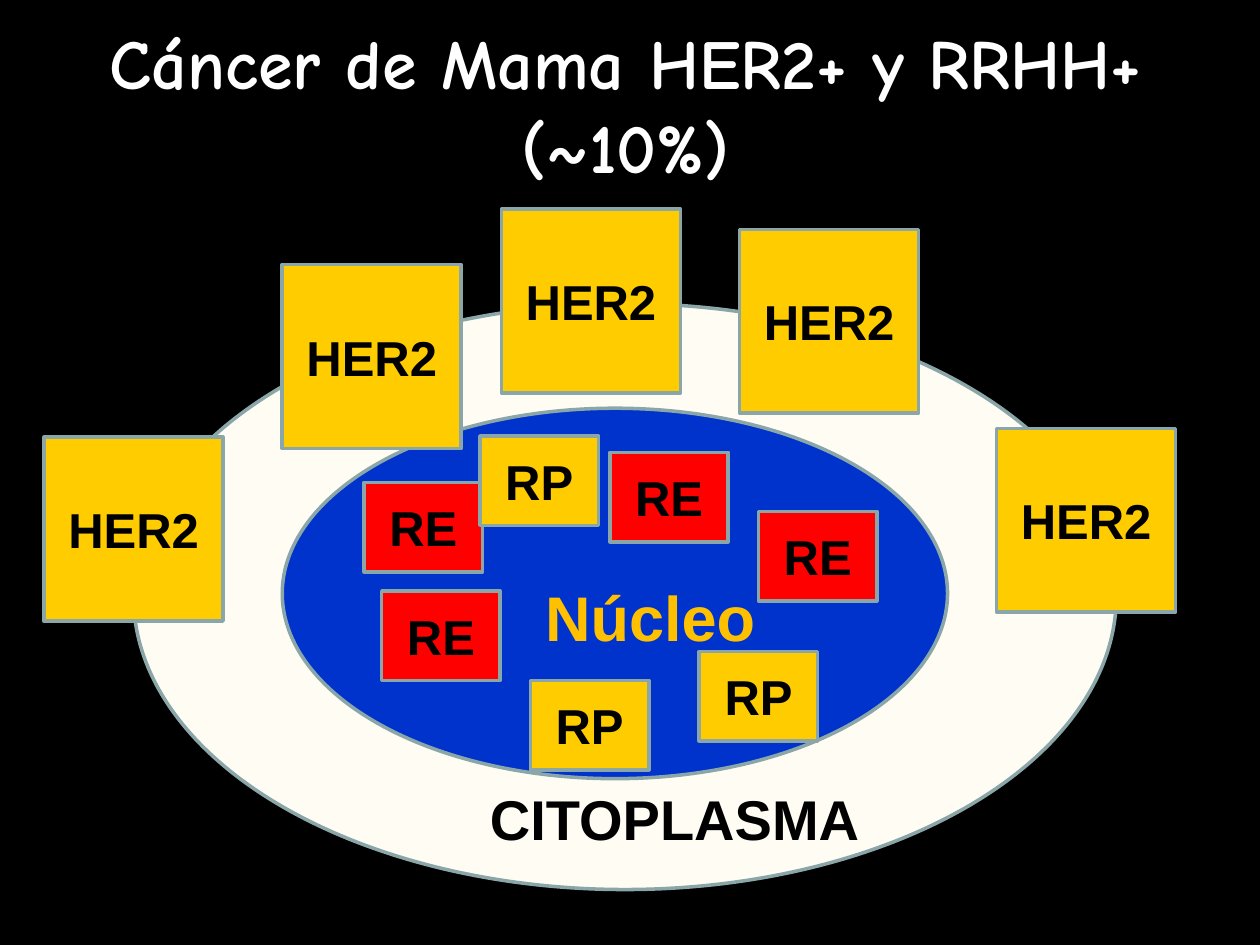
import pptx
import pptx.util
import pptx.dml.color
import pptx.enum.shapes
import pptx.enum.text

Inches = pptx.util.Inches
Pt = pptx.util.Pt
RGBColor = pptx.dml.color.RGBColor
MSO_SHAPE = pptx.enum.shapes.MSO_SHAPE
MSO_ANCHOR = pptx.enum.text.MSO_ANCHOR

BLACK = RGBColor(0x00, 0x00, 0x00)
WHITE = RGBColor(0xFF, 0xFF, 0xFF)
CREAM = RGBColor(0xFF, 0xFC, 0xF3)
BLUE = RGBColor(0x00, 0x33, 0xCC)
YELLOW = RGBColor(0xFF, 0xCC, 0x00)
AMBER = RGBColor(0xFF, 0xC0, 0x00)
RED = RGBColor(0xFF, 0x00, 0x00)
OUTLINE = RGBColor(0x8A, 0xA6, 0xA8)


def add_outlined(kind, left, top, width, height, fill):
    shape = slide.shapes.add_shape(
        kind, Inches(left), Inches(top), Inches(width), Inches(height))
    shape.shadow.inherit = False
    shape.fill.solid()
    shape.fill.fore_color.rgb = fill
    shape.line.color.rgb = OUTLINE
    shape.line.width = Pt(2)
    return shape


def add_centred_run(paragraph, text, size, color, font="Arial"):
    paragraph.alignment = pptx.enum.text.PP_ALIGN.CENTER
    run = paragraph.add_run()
    run.text = text
    run.font.name = font
    run.font.size = Pt(size)
    run.font.bold = True
    run.font.color.rgb = color


presentation = pptx.Presentation()
presentation.slide_width = Inches(10)
presentation.slide_height = Inches(7.5)
slide = presentation.slides.add_slide(presentation.slide_layouts[5])
slide.background.fill.solid()
slide.background.fill.fore_color.rgb = BLACK

# Title
title = slide.shapes.title
title.left, title.top = Inches(0.12), Inches(0.2)
title.width, title.height = Inches(9.69), Inches(1.25)
title.text_frame.vertical_anchor = MSO_ANCHOR.MIDDLE
title.text_frame.auto_size = pptx.enum.text.MSO_AUTO_SIZE.NONE
title_paragraph = title.text_frame.paragraphs[0]
add_centred_run(title_paragraph, "Cáncer de Mama HER2+ y RRHH+", 40, WHITE, "Comic Neue")
title_paragraph.add_line_break()
add_centred_run(title_paragraph, "(~10%)", 40, WHITE, "Comic Neue")

# Cell: cytoplasm and nucleus
add_outlined(MSO_SHAPE.OVAL, 1.06, 2.41, 7.8, 4.65, CREAM)
add_outlined(MSO_SHAPE.OVAL, 2.24, 3.24, 5.28, 2.94, BLUE)

# Names of the cell parts
cell_labels = [
    ("Núcleo", 3.9, 4.54, 2.52, 0.71, 36, AMBER),
    ("CITOPLASMA", 3.66, 6.18, 3.39, 0.64, 32, BLACK),
]
for text, left, top, width, height, size, color in cell_labels:
    label = slide.shapes.add_textbox(
        Inches(left), Inches(top), Inches(width), Inches(height))
    label.text_frame.word_wrap = True
    label.text_frame.auto_size = pptx.enum.text.MSO_AUTO_SIZE.SHAPE_TO_FIT_TEXT
    add_centred_run(label.text_frame.paragraphs[0], text, size, color)

# Receptors: HER2 on the membrane, RE and RP in the nucleus
receptors = [
    ("HER2", YELLOW, 1.42, 1.46,
     [(2.24, 2.1), (3.98, 1.66), (5.87, 1.82), (0.35, 3.47), (7.91, 3.4)]),
    ("RE", RED, 0.94, 0.71,
     [(2.89, 3.83), (4.84, 3.59), (6.02, 4.06), (3.03, 4.69)]),
    ("RP", YELLOW, 0.94, 0.71,
     [(3.81, 3.46), (5.55, 5.17), (4.21, 5.4)]),
]
for text, fill, width, height, positions in receptors:
    for left, top in positions:
        receptor = add_outlined(MSO_SHAPE.RECTANGLE, left, top, width, height, fill)
        receptor.text_frame.vertical_anchor = MSO_ANCHOR.MIDDLE
        add_centred_run(receptor.text_frame.paragraphs[0], text, 28, BLACK)

presentation.save("out.pptx")
